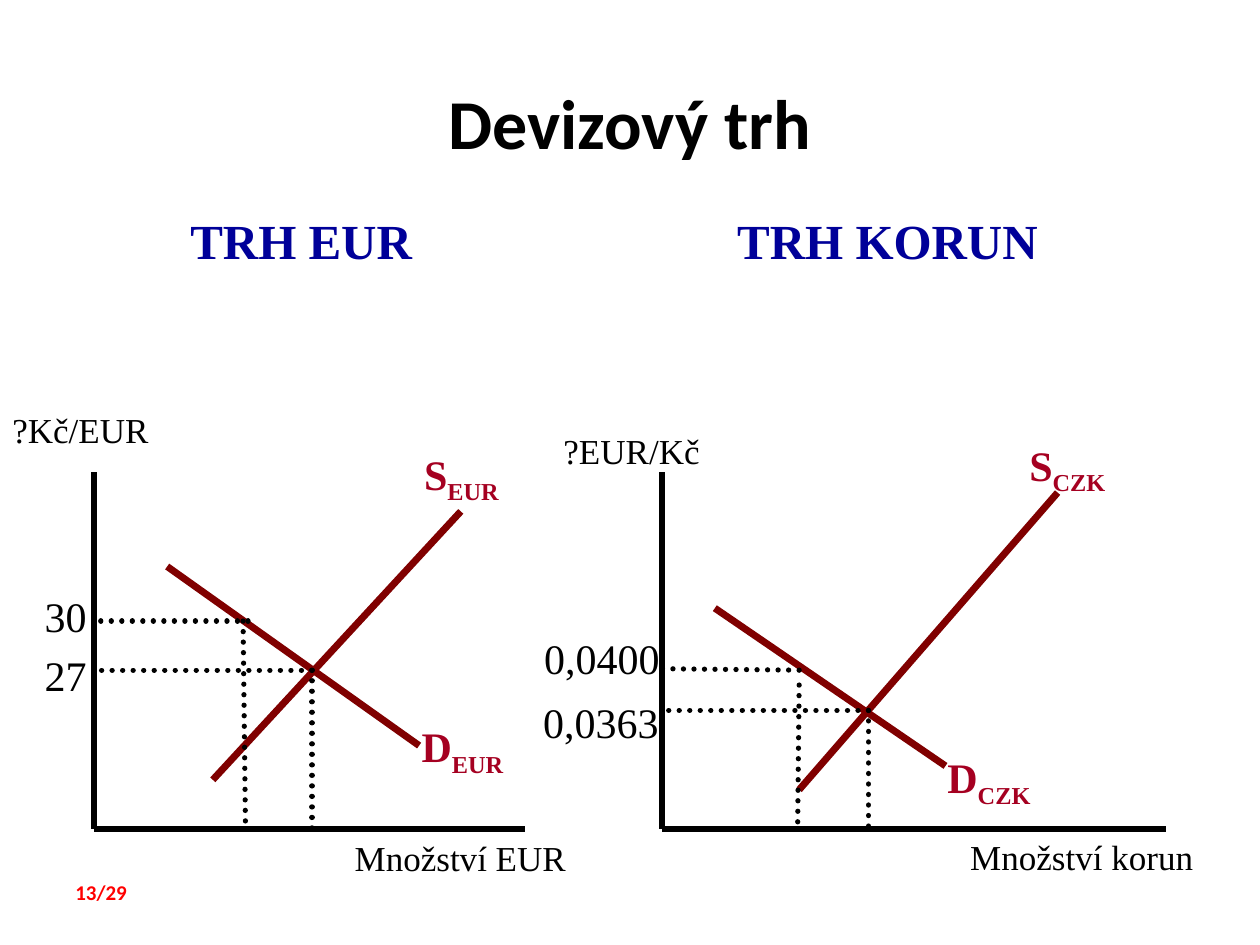
"""Build the foreign exchange market slide."""
from dataclasses import dataclass

from lxml import etree
from pptx import Presentation
from pptx import util as u
from pptx.dml.color import RGBColor
from pptx.enum import dml, shapes, text
from pptx.oxml.ns import qn


@dataclass(frozen=True)
class Theme:
    """Text and line formats of the slide."""
    title = dict(name="Calibri", size=40, bold=True, color="000000")
    heading = dict(name="Times New Roman", size=28, bold=True, color="000099")
    curve_label = dict(name="Times New Roman", size=24, bold=True, color="A50021")
    price = dict(name="Times New Roman", size=24, bold=False, color="000000")
    axis_label = dict(name="Times New Roman", size=20, bold=False, color="000000")
    page = dict(name="Calibri", size=12, bold=True, color="FF0000")
    axis = dict(width=3.5, color="000000")
    curve = dict(width=4, color="800000")
    guide = dict(width=3, color="000000", dotted=True)


THEME = Theme()

EUR_MARKET = dict(
    heading=("TRH EUR", (-0.81, -5.41, 9.96, 1.45)),
    price_axis=("?Kč/EUR", (-1.9, -1.4, 5, 1.09)),
    quantity_axis=("Množství EUR", (5, 7.21, 5.97, 1.09)),
    curves=[
        ("S", "EUR", (2.39, 6.2, 7.39, 0.79), (6.4, -0.61, 2.34, 1.3)),
        ("D", "EUR", (1.47, 1.9, 6.55, 5.51), (6.35, 4.88, 2.34, 1.3)),
    ],
    prices=[
        ("27", (-1.25, 3.45, 1.9, 1.3), (4.39, 3.99, 0, 3.99), (4.39, 3.99, 4.39, 7.21)),
        ("30", (-1.25, 2.26, 1.9, 1.3), (3.1, 3, 0, 3), (3, 3, 3.05, 7.19)),
    ],
)

CZK_MARKET = dict(
    heading=("TRH KORUN", (-0.43, -5.41, 9.96, 1.45)),
    price_axis=("?EUR/Kč", (-2.23, -0.99, 5, 1.09)),
    quantity_axis=("Množství korun", (5.97, 7.19, 5.26, 1.09)),
    curves=[
        ("S", "CZK", (2.77, 6.4, 7.98, 0.41), (7.16, -0.79, 2.34, 1.3)),
        ("D", "CZK", (1.07, 2.74, 5.72, 5.92), (5.51, 5.51, 2.97, 1.3)),
    ],
    prices=[
        ("0,0363", (-2.64, 4.39, 3.05, 1.27), (4.17, 4.8, -0.03, 4.8), (4.17, 4.8, 4.17, 7.21)),
        ("0,0400", (-2.62, 3.1, 3.05, 2.31), (2.77, 3.99, -0.03, 3.96), (2.77, 4.29, 2.74, 7.19)),
    ],
)


def add_run(paragraph, wording, style):
    """Add a run of text in the given style."""
    run = paragraph.add_run()
    run.text = wording
    values = dict(name=style["name"], size=u.Pt(style["size"]), bold=style["bold"])
    for attribute, value in values.items():
        setattr(run.font, attribute, value)
    run.font.color.rgb = RGBColor.from_string(style["color"])
    return run


def add_label(slide, wording, box, style, origin=(0, 0), subscript="", centred=False, middle=False):
    """Place one line of text, with an optional subscript, relative to an origin."""
    left, top, width, height = box
    label = slide.shapes.add_textbox(
        u.Cm(origin[0] + left), u.Cm(origin[1] + top), u.Cm(width), u.Cm(height))
    frame = label.text_frame
    values = dict(
        word_wrap=True,
        auto_size=text.MSO_AUTO_SIZE.NONE if middle else text.MSO_AUTO_SIZE.SHAPE_TO_FIT_TEXT,
        vertical_anchor=text.MSO_ANCHOR.MIDDLE if middle else text.MSO_ANCHOR.TOP)
    for attribute, value in values.items():
        setattr(frame, attribute, value)
    paragraph = frame.paragraphs[0]
    paragraph.alignment = text.PP_ALIGN.CENTER if centred else text.PP_ALIGN.LEFT
    add_run(paragraph, wording, style)
    if subscript:
        index = add_run(paragraph, subscript, style)
        index.font._element.set("baseline", "-25000")


def add_line(slide, ends, style, origin):
    """Draw a straight line between two points relative to an origin."""
    x, y = origin
    x1, y1, x2, y2 = ends
    line = slide.shapes.add_connector(
        shapes.MSO_CONNECTOR.STRAIGHT,
        u.Cm(x + x1), u.Cm(y + y1), u.Cm(x + x2), u.Cm(y + y2))
    line.line.width = u.Pt(style["width"])
    line.line.color.rgb = RGBColor.from_string(style["color"])
    properties = line._element.spPr
    if style.get("dotted"):
        line.line.dash_style = dml.MSO_LINE.ROUND_DOT
        properties.find(qn("a:ln")).set("cap", "rnd")
    etree.SubElement(properties, qn("a:effectLst"))


def add_market(slide, box, market):
    """Draw a supply and demand diagram whose axes span the box."""
    left, top, width, height = box
    origin = left, top
    for ends in [(0, 0, 0, height), (0, height, width, height)]:
        add_line(slide, ends, THEME.axis, origin)
    add_label(slide, *market["heading"], THEME.heading, origin, centred=True)
    for axis in ("price_axis", "quantity_axis"):
        add_label(slide, *market[axis], THEME.axis_label, origin)
    for letter, currency, ends, label_box in market["curves"]:
        add_line(slide, ends, THEME.curve, origin)
        add_label(slide, letter, label_box, THEME.curve_label, origin, subscript=currency)
    for price, label_box, *guides in market["prices"]:
        for ends in guides:
            add_line(slide, ends, THEME.guide, origin)
        add_label(slide, price, label_box, THEME.price, origin)


def main():
    """Build and save the slide."""
    presentation = Presentation()
    presentation.slide_width = u.Cm(25.4)
    presentation.slide_height = u.Cm(19.05)
    slide = presentation.slides.add_slide(presentation.slide_layouts[6])
    add_label(slide, "Devizový trh", (0, 0.86, 25.4, 3.18), THEME.title, centred=True, middle=True)
    add_market(slide, (1.9, 9.52, 8.69, 7.19), EUR_MARKET)
    add_market(slide, (13.34, 9.52, 10.16, 7.19), CZK_MARKET)
    add_label(slide, "13/29", (1.27, 17.6, 2.34, 0.76), THEME.page)
    presentation.save("out.pptx")


if __name__ == "__main__":
    main()
